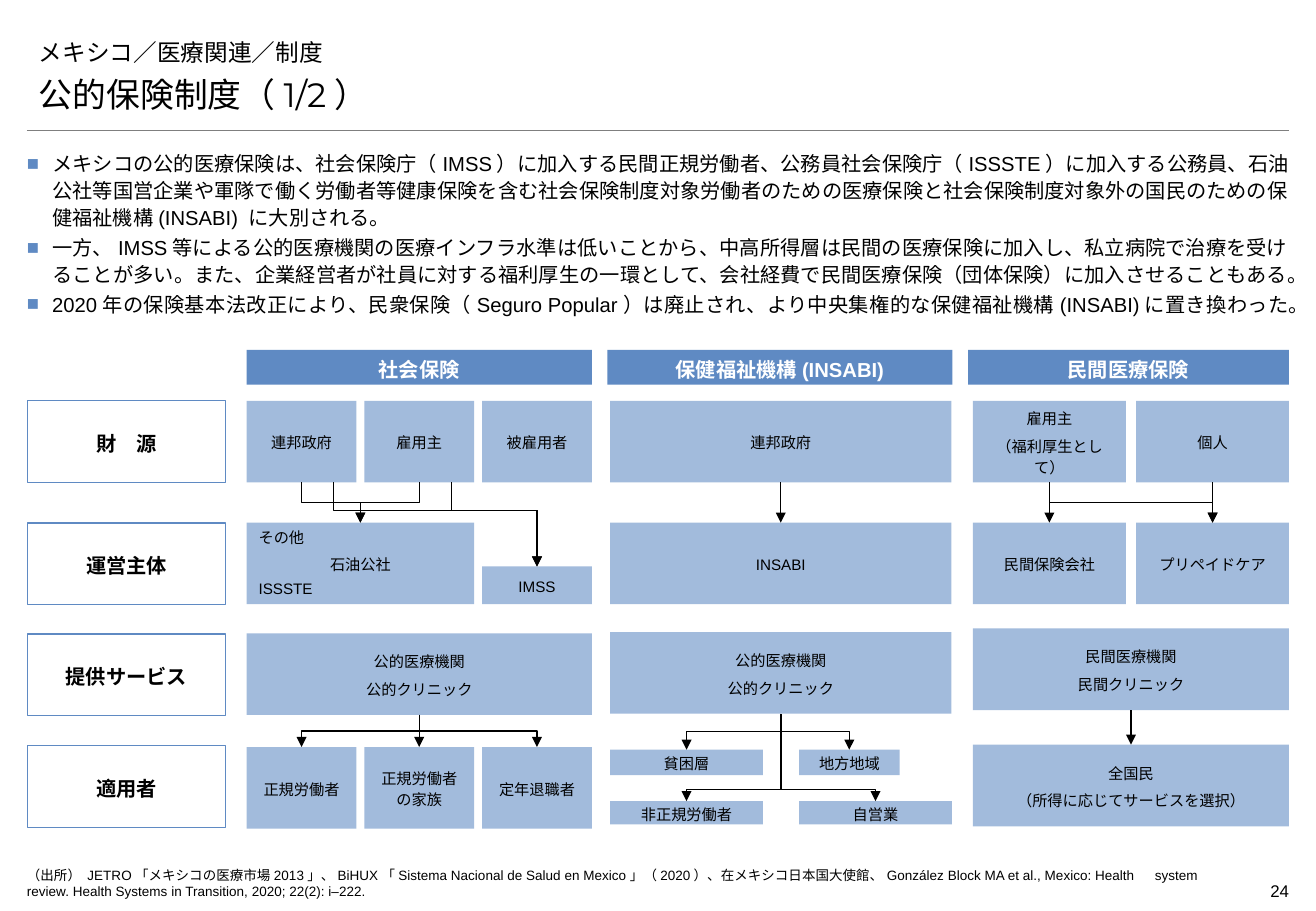
from pptx import Presentation
from pptx.dml.color import RGBColor
from pptx.enum.shapes import MSO_CONNECTOR, MSO_SHAPE
from pptx.enum.text import MSO_ANCHOR, PP_ALIGN
from pptx.oxml.ns import qn
from pptx.util import Pt
from lxml import etree

RECT = MSO_SHAPE.RECTANGLE
STRAIGHT, ELBOW = MSO_CONNECTOR.STRAIGHT, MSO_CONNECTOR.ELBOW
TOP, MIDDLE, BOTTOM = MSO_ANCHOR.TOP, MSO_ANCHOR.MIDDLE, MSO_ANCHOR.BOTTOM
LEFT, CENTER, RIGHT, JUSTIFY = PP_ALIGN.LEFT, PP_ALIGN.CENTER, PP_ALIGN.RIGHT, PP_ALIGN.JUSTIFY
BLUE, PALE, BLACK, WHITE, GREY = "5F8AC3", "A2BBDC", "000000", "FFFFFF", "7F7F7F"


def rgb(value):
    return RGBColor.from_string(value)


class Deck:
    font = "Arial"

    def __init__(self, width, height):
        self.prs = Presentation()
        self.prs.slide_width, self.prs.slide_height = Pt(width), Pt(height)
        self.s = self.prs.slides.add_slide(self.prs.slide_layouts[6])

    def paragraphs(self, tf, lines, size, color=BLACK, bold=False, align=LEFT,
                   spacing=None, after=0, bullet=False, font=None):
        tf.word_wrap = True
        for i, line in enumerate(lines):
            p = tf.paragraphs[0] if i == 0 else tf.add_paragraph()
            p.alignment = align
            p.space_after = Pt(after)
            if spacing:
                p.line_spacing = spacing
            if bullet:
                self.bullet(p)
            r = p.add_run()
            r.text = line
            f = r.font
            f.name, f.size, f.bold = font or self.font, Pt(size), bold
            f.color.rgb = rgb(color)

    def bullet(self, p):
        pPr = p._p.get_or_add_pPr()
        pPr.set("marL", str(Pt(15)))
        pPr.set("indent", str(-Pt(15)))
        clr = etree.SubElement(pPr, qn("a:buClr"))
        etree.SubElement(clr, qn("a:srgbClr"), val=BLUE)
        etree.SubElement(pPr, qn("a:buFont"), typeface=self.font)
        etree.SubElement(pPr, qn("a:buChar"), char="■")

    def text(self, x, y, w, h, lines, size, anchor=TOP, insets=(7.2, 3.6), **style):
        tf = self.s.shapes.add_textbox(Pt(x), Pt(y), Pt(w), Pt(h)).text_frame
        tf.margin_left = tf.margin_right = Pt(insets[0])
        tf.margin_top = tf.margin_bottom = Pt(insets[1])
        tf.vertical_anchor = anchor
        self.paragraphs(tf, lines, size, **style)

    def box(self, x, y, w, h, *lines, fill=PALE, border=None, size=9, **style):
        sp = self.s.shapes.add_shape(RECT, Pt(x), Pt(y), Pt(w), Pt(h))
        sp.shadow.inherit = False
        if fill:
            sp.fill.solid()
            sp.fill.fore_color.rgb = rgb(fill)
        else:
            sp.fill.background()
        if border:
            sp.line.color.rgb = rgb(border)
            sp.line.width = Pt(0.75)
        else:
            sp.line.fill.background()
        sp.text_frame.vertical_anchor = MIDDLE
        self.paragraphs(sp.text_frame, lines, size, align=CENTER, spacing=1.14, after=4, **style)
        return sp

    def line(self, x1, y1, x2, y2, kind=STRAIGHT, color=BLACK, width=0.75, arrow=False):
        c = self.s.shapes.add_connector(kind, Pt(x1), Pt(y1), Pt(x2), Pt(y2))
        c.line.color.rgb = rgb(color)
        c.line.width = Pt(width)
        spPr = c._element.spPr
        if arrow:
            etree.SubElement(spPr.get_or_add_ln(), qn("a:tailEnd"), type="triangle")
        etree.SubElement(spPr, qn("a:effectLst"))
        return c

    def link(self, upper, lower, bend=0.5, shift=0):
        """Arrow from the bottom of one box to the top of another, turning at the share bend."""
        x1 = (upper.left + upper.width / 2) / Pt(1) + shift
        y1 = (upper.top + upper.height) / Pt(1)
        x2 = (lower.left + lower.width / 2) / Pt(1)
        y2 = lower.top / Pt(1)
        dx, dy = x2 - x1, y2 - y1
        if abs(dx) < 1:
            self.line(x1, y1, x1, y2, arrow=True)
            return
        # An elbow leaves sideways, so it is laid out lying down and turned upright.
        cx, cy, w, h = (x1 + x2) / 2, (y1 + y2) / 2, dy, abs(dx)
        c = self.line(cx - w / 2, cy - h / 2, cx + w / 2, cy + h / 2, ELBOW, arrow=True)
        spPr = c._element.spPr
        xfrm = spPr.find(qn("a:xfrm"))
        xfrm.set("rot", str((270 if dx > 0 else 90) * 60000))
        if dx > 0:
            xfrm.set("flipH", "1")
        guides = spPr.find(qn("a:prstGeom")).get_or_add_avLst()
        etree.SubElement(guides, qn("a:gd"), name="adj1", fmla=f"val {round(bend * 100000)}")


def main():
    d = Deck(780, 540)

    # Heading and body text
    d.line(16, 77, 764, 77, color=GREY, width=0.25)
    d.text(16, 15, 748, 28, ["メキシコ／医療関連／制度"], 14, BOTTOM, font="Montserrat")
    d.text(16, 43, 748, 28, ["公的保険制度（1/2）"], 20, BOTTOM, font="Montserrat")
    d.text(16, 88.5, 748, 99, [
        "メキシコの公的医療保険は、社会保険庁（IMSS）に加入する民間正規労働者、公務員社会保険庁（ISSSTE）に加入する公務員、石油公社等国営企業や軍隊で働く労働者等健康保険を含む社会保険制度対象労働者のための医療保険と社会保険制度対象外の国民のための保健福祉機構(INSABI) に大別される。",
        "一方、IMSS等による公的医療機関の医療インフラ水準は低いことから、中高所得層は民間の医療保険に加入し、私立病院で治療を受けることが多い。また、企業経営者が社員に対する福利厚生の一環として、会社経費で民間医療保険（団体保険）に加入させることもある。",
        "2020年の保険基本法改正により、民衆保険（Seguro Popular）は廃止され、より中央集権的な保健福祉機構(INSABI)に置き換わった。",
    ], 12, insets=(0, 0), align=JUSTIFY, spacing=1.1, after=2, bullet=True)

    # Column headers and row labels
    for x, w, name in ((146.2, 204.6, "社会保険"), (360, 204.6, "保健福祉機構(INSABI)"),
                       (573.8, 190.2, "民間医療保険")):
        d.box(x, 207.4, w, 20.6, name, fill=BLUE, size=12, color=WHITE, bold=True)
    for y, name in ((237.6, "財　源"), (310, "運営主体"), (375.8, "提供サービス"), (442, "適用者")):
        d.box(16.3, y, 117.4, 48.4, name, fill=None, border=BLUE, size=12, bold=True)

    fund_y, run_y, row_h = 237.6, 309.8, 48.4

    # Social insurance
    social_x = [146.2 + 69.8 * i for i in range(3)]
    state, employer, _ = [d.box(x, fund_y, 65, row_h, name)
                          for x, name in zip(social_x, ("連邦政府", "雇用主", "被雇用者"))]
    others = d.box(146.2, run_y, 134.8, row_h, "石油公社")
    for y, name in ((309.6, "その他"), (339.8, "ISSSTE")):
        d.text(146.2, y, 52.6, 18, [name], 9)
    imss = d.box(social_x[2], 335.8, 65, 22.4, "IMSS")
    care = d.box(146.2, 375.4, 204.6, row_h, "公的医療機関", "公的クリニック")
    members = [d.box(x, 442.8, 65, row_h, name)
               for x, name in zip(social_x, ("正規労働者", "正規労働者の家族", "定年退職者"))]
    for payer in (state, employer):
        d.link(payer, others)
        d.link(payer, imss, bend=0.33, shift=19)
    for member in members:
        d.link(care, member)

    # INSABI
    x, w = 361.6, 202.4
    funds = d.box(x, fund_y, w, row_h, "連邦政府")
    insabi = d.box(x, run_y, w, row_h, "INSABI")
    care = d.box(x, 374.7, w, row_h, "公的医療機関", "公的クリニック")
    d.link(funds, insabi)
    for left, y, width, h, name, bend in (
            (x, 444.4, 90.6, 15.2, "貧困層", 0.5), (473.6, 444.4, 59.6, 15.2, "地方地域", 0.5),
            (x, 474.9, 90.6, 13.8, "非正規労働者", 0.87), (473.6, 474.9, 90.6, 13.8, "自営業", 0.87)):
        d.link(care, d.box(left, y, width, h, name), bend)

    # Private insurance
    x, step, w = 576.7, 96.7, 90.6
    payers = [d.box(x, fund_y, w, row_h, "雇用主", "（福利厚生として）"),
              d.box(x + step, fund_y, w, row_h, "個人")]
    insurers = [d.box(x + step * i, run_y, w, row_h, name)
                for i, name in enumerate(("民間保険会社", "プリペイドケア"))]
    care = d.box(x, 372.5, step + w, row_h, "民間医療機関", "民間クリニック")
    public = d.box(x, 441.4, step + w, row_h, "全国民", "（所得に応じてサービスを選択）")
    for payer, insurer in zip(payers, insurers):
        d.link(payer, insurer)
    d.link(payers[0], insurers[1])
    d.link(care, public)

    # Footer
    d.text(16, 514, 708.5, 11.5, [
        "（出所） JETRO「メキシコの医療市場2013」、BiHUX「Sistema Nacional de Salud en Mexico」（2020）、在メキシコ日本国大使館、González Block MA et al., Mexico: Health　system review. Health Systems in Transition, 2020; 22(2): i–222.",
    ], 8, insets=(0, 0))
    d.text(707.5, 518.4, 56.5, 19.4, ["24"], 10, insets=(0, 3.6), align=RIGHT)

    d.prs.save("out.pptx")


if __name__ == "__main__":
    main()
